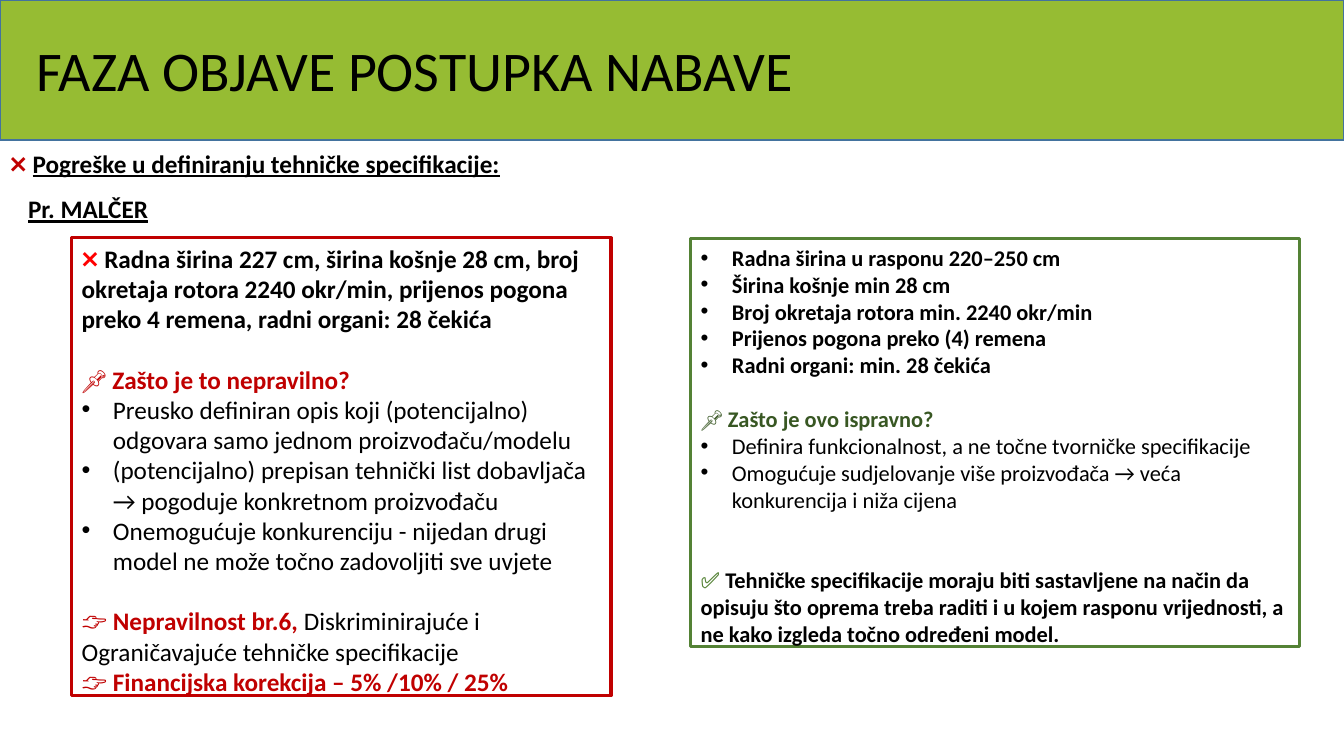
from lxml import etree
from pptx import Presentation
from pptx.dml.color import RGBColor
from pptx.enum import shapes, text
from pptx.oxml import ns
from pptx.util import Inches, Pt

COLORS = {"band": "96BC33", "edge": "43739E", "black": "000000",
          "red": "C00000", "bright": "FF0000", "green": "548235",
          "dark": "385723"}
FONT = "Calibri"

# Each item: (bullet, blank lines above, runs); each run: (words, color, style)
WRONG = [
    (False, 0, [("❌ ", "bright", "b"),
                ("Radna širina 227 cm, širina košnje 28 cm, broj okretaja rotora "
                 "2240 okr/min, prijenos pogona preko 4 remena, radni organi: "
                 "28 čekića", "black", "b")]),
    (False, 1, [("📌 Zašto je to nepravilno?", "red", "b")]),
    (True, 0, [("Preusko definiran opis koji (potencijalno) odgovara samo "
                "jednom proizvođaču/modelu", "black", "")]),
    (True, 0, [("(potencijalno) prepisan tehnički list dobavljača → pogoduje "
                "konkretnom proizvođaču", "black", "")]),
    (True, 0, [("Onemogućuje konkurenciju - nijedan drugi model ne može točno "
                "zadovoljiti sve uvjete", "black", "")]),
    (False, 1, [("👉 ", "red", ""), ("Nepravilnost br.6, ", "red", "b"),
                ("Diskriminirajuće i", "black", "")]),
    (False, 0, [("Ograničavajuće tehničke specifikacije", "black", "")]),
    (False, 0, [("👉 ", "red", ""),
                ("Financijska korekcija – 5% /10% / 25%", "red", "b")]),
]
RIGHT = [
    (True, 0, [("Radna širina u rasponu 220–250 cm", "black", "b")]),
    (True, 0, [("Širina košnje min 28 cm", "black", "b")]),
    (True, 0, [("Broj okretaja rotora min. 2240 okr/min", "black", "b")]),
    (True, 0, [("Prijenos pogona preko (4) remena", "black", "b")]),
    (True, 0, [("Radni organi: min. 28 čekića", "black", "b")]),
    (False, 1, [("📌 Zašto je ovo ispravno?", "dark", "b")]),
    (True, 0, [("Definira funkcionalnost, a ne točne tvorničke specifikacije",
                "black", "")]),
    (True, 0, [("Omogućuje sudjelovanje više proizvođača → veća konkurencija "
                "i niža cijena", "black", "")]),
    (False, 2, [("✅ ", "green", "b"),
                ("Tehničke specifikacije moraju biti sastavljene na način da "
                 "opisuju što oprema treba raditi i u kojem rasponu vrijednosti, "
                 "a ne kako izgleda točno određeni model.", "black", "b")]),
]


def rgb(name):
    return RGBColor.from_string(COLORS[name])


def place(shape, left, top, width, height):
    shape.left, shape.top = Inches(left), Inches(top)
    shape.width, shape.height = Inches(width), Inches(height)


def add_runs(para, runs, size):
    for words, color, style in runs:
        run = para.add_run()
        run.text = words
        font = run.font
        font.name, font.size = FONT, Pt(size)
        font.bold, font.underline = "b" in style, "u" in style
        font.color.rgb = rgb(color)


def set_bullet(para, bullet):
    props = para._p.get_or_add_pPr()
    indent = Inches(0.31) if bullet else 0
    props.set("marL", str(indent))
    props.set("indent", str(-indent))
    tag = etree.SubElement(props, ns.qn("a:buChar" if bullet else "a:buNone"))
    if bullet:
        tag.set("char", "•")


def fill_panel(panel, box, edge, size, items):
    place(panel, *box)
    panel.line.color.rgb = rgb(edge)
    panel.line.width = Pt(2.25)
    frame = panel.text_frame
    frame.word_wrap = True
    frame.auto_size = text.MSO_AUTO_SIZE.SHAPE_TO_FIT_TEXT
    frame.vertical_anchor = text.MSO_ANCHOR.TOP
    for i, (bullet, gap, runs) in enumerate(items):
        para = frame.add_paragraph() if i else frame.paragraphs[0]
        set_bullet(para, bullet)
        para.space_before = Pt(gap * size * 1.2)
        add_runs(para, runs, size)


def add_label(slide, box, runs):
    label = slide.shapes.add_textbox(*map(Inches, box))
    frame = label.text_frame
    frame.word_wrap = False
    frame.auto_size = text.MSO_AUTO_SIZE.SHAPE_TO_FIT_TEXT
    add_runs(frame.paragraphs[0], runs, 18)


def add_band(slide):
    band = slide.shapes.add_shape(shapes.MSO_SHAPE.RECTANGLE, 0, 0,
                                  Inches(13.33), Inches(1.39))
    band.shadow.inherit = False
    band.fill.solid()
    band.fill.fore_color.rgb = rgb("band")
    band.line.color.rgb = rgb("edge")
    band.line.width = Pt(1)
    # Send behind the title
    slide.shapes._spTree.insert(2, band._element)


def set_title(title):
    place(title, 0.26, 0.28, 12.6, 0.89)
    frame = title.text_frame
    frame.auto_size = text.MSO_AUTO_SIZE.NONE
    frame.vertical_anchor = text.MSO_ANCHOR.MIDDLE
    para = frame.paragraphs[0]
    para.alignment = text.PP_ALIGN.LEFT
    para.line_spacing = 0.9
    add_runs(para, [("FAZA OBJAVE POSTUPKA NABAVE", "black", "")], 40)


def main():
    deck = Presentation()
    deck.slide_width, deck.slide_height = Inches(13.33), Inches(7.5)
    slide = deck.slides.add_slide(deck.slide_layouts[3])
    title, left, right = list(slide.placeholders)[:3]

    # Header
    add_band(slide)
    set_title(title)
    add_label(slide, (0, 1.42, 5.31, 0.4),
              [("❌ ", "red", "b"),
               ("Pogreške u definiranju tehničke specifikacije:", "black", "bu")])
    add_label(slide, (0.18, 1.87, 1.4, 0.4), [("Pr. MALČER", "black", "bu")])

    # Wrong and right specification
    fill_panel(left, (0.71, 2.36, 5.35, 4.64), "red", 18, WRONG)
    fill_panel(right, (6.85, 2.37, 6.04, 4.14), "green", 16, RIGHT)

    deck.save("out.pptx")


if __name__ == "__main__":
    main()
